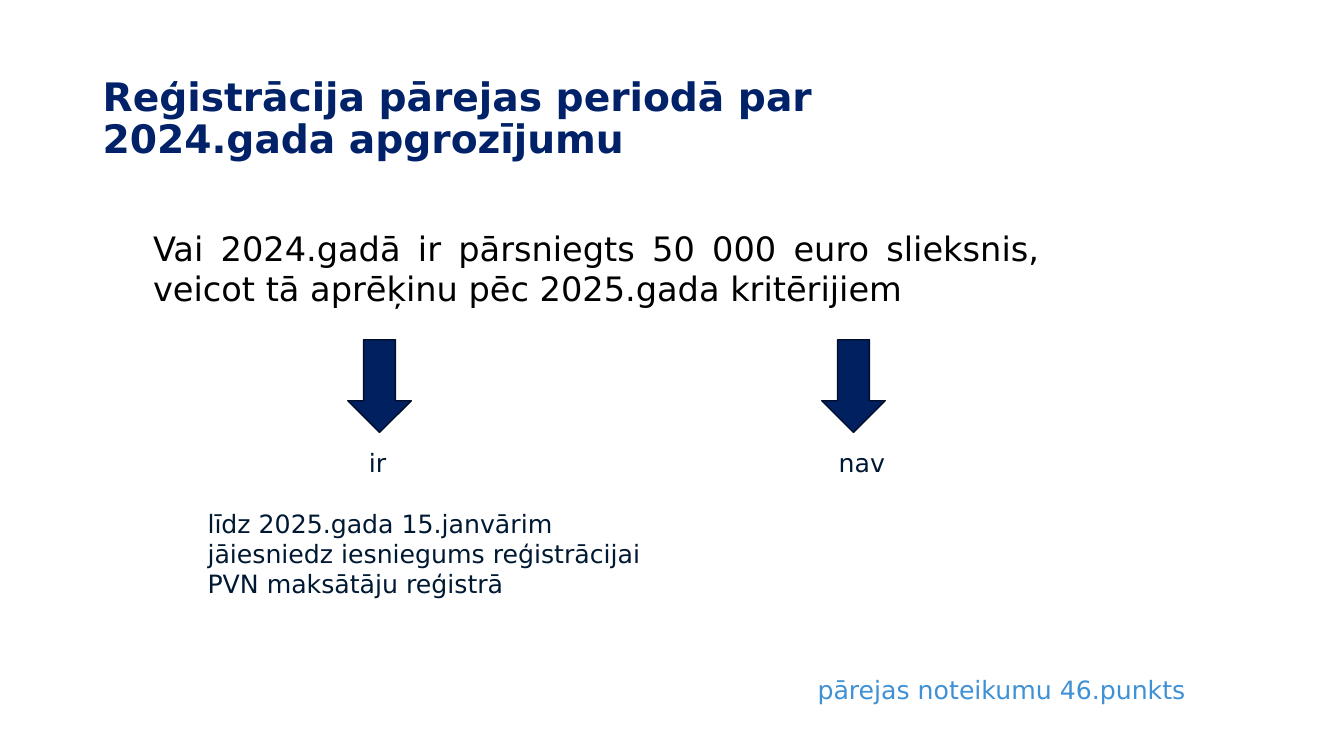
import pptx
import pptx.dml.color
import pptx.enum.shapes
import pptx.enum.text
import pptx.util
from dataclasses import dataclass

Inches = pptx.util.Inches
Align = pptx.enum.text.PP_ALIGN
Anchor = pptx.enum.text.MSO_ANCHOR


@dataclass(frozen=True)
class Theme:
    font: str = "DejaVu Sans"
    title_color: str = "012269"
    question_color: str = "000000"
    answer_color: str = "001933"
    reference_color: str = "3F91D5"
    arrow_fill: str = "002060"
    arrow_line: str = "000E2A"
    title_size: int = 28
    question_size: int = 24
    body_size: int = 18


THEME = Theme()

TITLE = "Reģistrācija pārejas periodā par 2024.gada apgrozījumu"
QUESTION = "Vai 2024.gadā ir pārsniegts 50 000 euro slieksnis, veicot tā aprēķinu pēc 2025.gada kritērijiem"
BRANCHES = [
    {"answer": "ir", "arrow_left": 3.45, "label_left": 3.56, "label_width": 0.53},
    {"answer": "nav", "arrow_left": 8.15, "label_left": 8.22, "label_width": 0.72},
]
ACTION = "līdz 2025.gada 15.janvārim jāiesniedz iesniegums reģistrācijai PVN maksātāju reģistrā"
REFERENCE = "pārejas noteikumu 46.punkts"

ARROW_TOP, ARROW_WIDTH, ARROW_HEIGHT = 3.37, 0.63, 0.92
LABEL_TOP, LABEL_HEIGHT = 4.39, 0.4


def rgb(value):
    return pptx.dml.color.RGBColor.from_string(value)


def add_text(slide, box, text, size, color, bold=False, align=Align.LEFT,
             anchor=Anchor.TOP, line_spacing=1.0):
    shape = slide.shapes.add_textbox(*map(Inches, box))
    frame = shape.text_frame
    frame.word_wrap = True
    frame.vertical_anchor = anchor
    paragraph = frame.paragraphs[0]
    paragraph.alignment = align
    paragraph.line_spacing = line_spacing
    run = paragraph.add_run()
    run.text = text
    run.font.name = THEME.font
    run.font.size = pptx.util.Pt(size)
    run.font.bold = bold
    run.font.color.rgb = rgb(color)


def add_arrow(slide, left):
    shape = slide.shapes.add_shape(
        pptx.enum.shapes.MSO_SHAPE.DOWN_ARROW,
        Inches(left), Inches(ARROW_TOP), Inches(ARROW_WIDTH), Inches(ARROW_HEIGHT))
    shape.shadow.inherit = False
    shape.fill.solid()
    shape.fill.fore_color.rgb = rgb(THEME.arrow_fill)
    shape.line.color.rgb = rgb(THEME.arrow_line)
    shape.line.width = pptx.util.Pt(1)


def main():
    presentation = pptx.Presentation()
    presentation.slide_width = Inches(13.33)
    presentation.slide_height = Inches(7.5)
    slide = presentation.slides.add_slide(presentation.slide_layouts[6])

    add_text(slide, (0.92, 0.69, 9.49, 0.99), TITLE, THEME.title_size, THEME.title_color,
             bold=True, anchor=Anchor.MIDDLE, line_spacing=0.9)
    add_text(slide, (1.42, 2.21, 8.99, 0.88), QUESTION, THEME.question_size,
             THEME.question_color, align=Align.JUSTIFY)
    for branch in BRANCHES:
        add_arrow(slide, branch["arrow_left"])
        label_box = (branch["label_left"], LABEL_TOP, branch["label_width"], LABEL_HEIGHT)
        add_text(slide, label_box, branch["answer"], THEME.body_size, THEME.answer_color)
    add_text(slide, (1.96, 4.99, 4.88, 1.01), ACTION, THEME.body_size, THEME.answer_color)
    add_text(slide, (8.01, 6.64, 4.41, 0.4), REFERENCE, THEME.body_size, THEME.reference_color)

    presentation.save("out.pptx")


if __name__ == "__main__":
    main()
